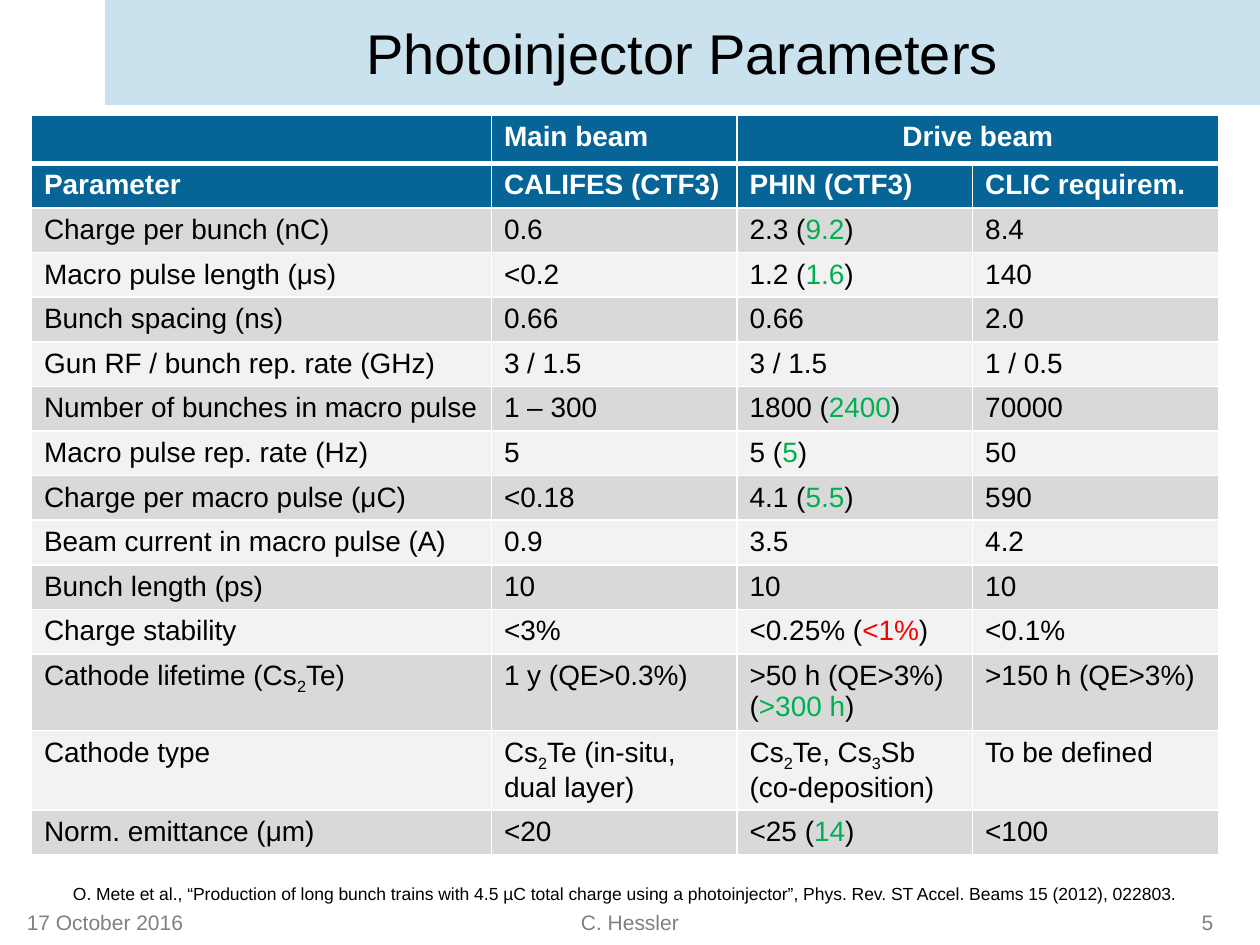
from lxml.etree import SubElement as Sub
from pptx import Presentation
from pptx.dml.color import RGBColor
from pptx.enum.shapes import MSO_SHAPE as Shape
from pptx.enum.text import MSO_ANCHOR as Anchor, MSO_AUTO_SIZE as Fit, PP_ALIGN as Align
from pptx.oxml.ns import qn
from pptx.util import Pt

BLACK = RGBColor(0x00, 0x00, 0x00)
WHITE = RGBColor(0xFF, 0xFF, 0xFF)
GRAY = RGBColor(0x80, 0x80, 0x80)
SKY = RGBColor(0xC9, 0xE2, 0xED)
BLUE = RGBColor(0x07, 0x64, 0x97)
DARK = RGBColor(0xD9, 0xD9, 0xD9)
LIGHT = RGBColor(0xF2, 0xF2, 0xF2)
GREEN = RGBColor(0x00, 0xB0, 0x50)
RED = RGBColor(0xFF, 0x00, 0x00)

# Between bars: g = green, r = red, s = subscript
ROWS = [
    ["", "Main beam", "Drive beam", ""],
    ["Parameter", "CALIFES (CTF3)", "PHIN (CTF3)", "CLIC requirem."],
    ["Charge per bunch (nC)", "0.6", "2.3 (|g9.2|)", "8.4"],
    ["Macro pulse length (μs)", "<0.2", "1.2 (|g1.6|)", "140"],
    ["Bunch spacing (ns)", "0.66", "0.66", "2.0"],
    ["Gun RF / bunch rep. rate (GHz)", "3 / 1.5", "3 / 1.5", "1 / 0.5"],
    ["Number of bunches in macro pulse", "1 – 300", "1800 (|g2400|)", "70000"],
    ["Macro pulse rep. rate (Hz)", "5", "5 (|g5|)", "50"],
    ["Charge per macro pulse (μC)", "<0.18", "4.1 (|g5.5|)", "590"],
    ["Beam current in macro pulse (A)", "0.9", "3.5", "4.2"],
    ["Bunch length (ps)", "10", "10", "10"],
    ["Charge stability", "<3%", "<0.25% (|r<1%|)", "<0.1%"],
    ["Cathode lifetime (Cs|s2|Te)", "1 y (QE>0.3%)",
     ">50 h (QE>3%)\n(|g>300 h|)", ">150 h (QE>3%)"],
    ["Cathode type", "Cs|s2|Te (in-situ, dual layer)",
     "Cs|s2|Te, Cs|s3|Sb\n(co-deposition)", "To be defined"],
    ["Norm. emittance (μm)", "<20", "<25 (|g14|)", "<100"],
]
WIDTHS = [262.8, 140.4, 134.6, 140.4]
HEADS = 2
TALL = (12, 13)


class Deck:
    face = "Arial"
    tints = {"g": GREEN, "r": RED}

    def __init__(self):
        self.prs = Presentation()
        self.prs.slide_width, self.prs.slide_height = Pt(720), Pt(540)
        self.slide = self.prs.slides.add_slide(self.prs.slide_layouts[6])

    def put(self, frame, text, size, color, align=Align.LEFT, bold=False):
        """Fill a text frame, reading the bar marks in the text."""
        for i, line in enumerate(text.split("\n")):
            para = frame.add_paragraph() if i else frame.paragraphs[0]
            para.alignment = align
            font = para.font
            font.name, font.size, font.bold = self.face, Pt(size), bold
            font.color.rgb = color
            for j, part in enumerate(line.split("|")):
                run = para.add_run()
                run.text = part[1:] if j % 2 else part
                if j % 2 and part[0] in self.tints:
                    run.font.color.rgb = self.tints[part[0]]
                elif j % 2:
                    run.font._element.set("baseline", "-25000")

    def banner(self, text, left, top, width, height):
        box = self.slide.shapes.add_shape(
            Shape.RECTANGLE, Pt(left), Pt(top), Pt(width), Pt(height))
        box.shadow.inherit = False
        box.fill.solid()
        box.fill.fore_color.rgb = SKY
        box.line.fill.background()
        box.text_frame.vertical_anchor = Anchor.MIDDLE
        self.put(box.text_frame, text, 32, BLACK, Align.CENTER)

    def label(self, text, left, top, width, height, size=12, color=GRAY,
              align=Align.CENTER, wrap=True):
        box = self.slide.shapes.add_textbox(Pt(left), Pt(top), Pt(width), Pt(height))
        frame = box.text_frame
        frame.word_wrap = wrap
        frame.auto_size = Fit.NONE if wrap else Fit.SHAPE_TO_FIT_TEXT
        self.put(frame, text, size, color, align)

    def edge(self, cell, row):
        """Draw white borders, with a thick rule under the first row."""
        props = cell._tc.get_or_add_tcPr()
        for side in "LRTB":
            thick = (row, side) in ((0, "B"), (1, "T"))
            line = Sub(props, qn("a:ln" + side), w=str(Pt(3 if thick else 1)))
            Sub(Sub(line, qn("a:solidFill")), qn("a:srgbClr"), val=str(WHITE))

    def table(self, left, top):
        highs = [43.9 if r in TALL else 25.5 for r in range(len(ROWS))]
        grid = self.slide.shapes.add_table(
            len(ROWS), len(WIDTHS), Pt(left), Pt(top),
            Pt(sum(WIDTHS)), Pt(sum(highs))).table
        grid.first_row = grid.horz_banding = False
        for col, width in zip(grid.columns, WIDTHS):
            col.width = Pt(width)
        for row, high in zip(grid.rows, highs):
            row.height = Pt(high)
        grid.cell(0, 2).merge(grid.cell(0, 3))
        for r, texts in enumerate(ROWS):
            head = r < HEADS
            for c, text in enumerate(texts):
                cell = grid.cell(r, c)
                self.edge(cell, r)
                cell.fill.solid()
                cell.fill.fore_color.rgb = BLUE if head else LIGHT if r % 2 else DARK
                align = Align.CENTER if cell.is_merge_origin else Align.LEFT
                self.put(cell.text_frame, text, 16, WHITE if head else BLACK,
                         align, head)


def main():
    deck = Deck()
    deck.banner("Photoinjector Parameters", 60, 0, 660, 60)
    deck.label("17 October 2016", 0, 516, 120, 24)
    deck.label("C. Hessler", 138, 516, 444, 24)
    deck.label("5", 660, 516, 60, 24)
    deck.table(18, 66)
    deck.label("O. Mete et al., “Production of long bunch trains with 4.5 µC total "
               "charge using a photoinjector”, Phys. Rev. ST Accel. Beams 15 (2012), "
               "022803.", 34.6, 501, 650, 19.4, 10, BLACK, Align.LEFT, False)
    deck.prs.save("out.pptx")


if __name__ == "__main__":
    main()
